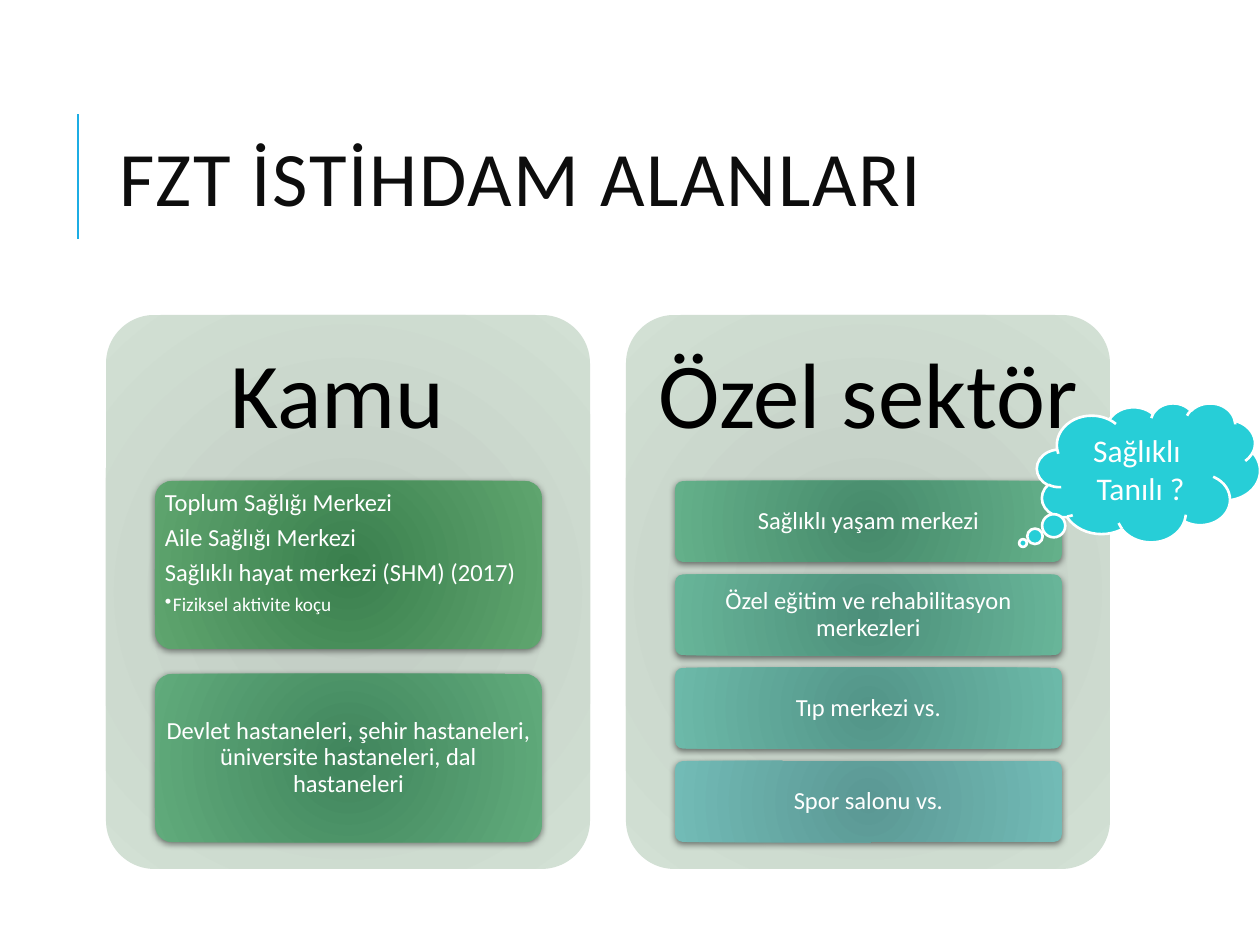
"""Build the slide on employment areas for physiotherapists."""
from lxml import etree
from pptx import Presentation
from pptx.dml.color import RGBColor
from pptx.enum.shapes import MSO_CONNECTOR, MSO_SHAPE
from pptx.enum.text import MSO_ANCHOR, PP_ALIGN
from pptx.oxml import parse_xml
from pptx.oxml.ns import nsdecls, qn
from pptx.util import Pt

ROUNDED, CLOUD = MSO_SHAPE.ROUNDED_RECTANGLE, MSO_SHAPE.CLOUD_CALLOUT
STRAIGHT = MSO_CONNECTOR.STRAIGHT
LEFT, CENTER = PP_ALIGN.LEFT, PP_ALIGN.CENTER
TOP, MIDDLE = MSO_ANCHOR.TOP, MSO_ANCHOR.MIDDLE
FONT = "Calibri"
SCALE = 914400 / 126

COLORS = {
    "title": "0D0D0D", "black": "000000", "white": "FFFFFF", "rule": "1CADE4",
    "cloud": "27CED7", "panel_inner": "C0CBC2", "panel_outer": "D2E0D4",
}
TITLE = "FZT İSTİHDAM ALANLARI"
PANELS = [
    {"heading": "Kamu ", "left": 106, "box_height": 168, "boxes": [
        {"lines": ["Toplum Sağlığı Merkezi", "Aile Sağlığı Merkezi",
                   "Sağlıklı hayat merkezi (SHM) (2017)"],
         "bullets": ["Fiziksel aktivite koçu"], "gradient": ("3A7F4D", "5FA56F")},
        {"lines": ["Devlet hastaneleri, şehir hastaneleri, üniversite hastaneleri, "
                   "dal hastaneleri"], "gradient": ("40855C", "61AB7C")},
    ]},
    {"heading": "Özel sektör", "left": 626, "box_height": 81, "boxes": [
        {"lines": ["Sağlıklı yaşam merkezi"], "gradient": ("468A6B", "64B08A")},
        {"lines": ["Özel eğitim ve rehabilitasyon merkezleri"],
         "gradient": ("4C8F7A", "68B599")},
        {"lines": ["Tıp merkezi vs."], "gradient": ("539588", "6CB9A9")},
        {"lines": ["Spor salonu vs."], "gradient": ("5B9894", "72BBB6")},
    ]},
]
CLOUD_LINES = ["Sağlıklı ", "Tanılı ?"]

PANEL_TOP, PANEL_WIDTH, PANEL_HEIGHT, HEADING_HEIGHT = 315, 484, 554, 166
BOX_INDENT, BOX_WIDTH, BOXES_TOP, BOXES_HEIGHT = 49, 387, 481, 361


def px(*lengths):
    return [round(length * SCALE) for length in lengths]


def color(name):
    return RGBColor.from_string(COLORS[name])


def set_frame(shape, anchor, margins):
    frame = shape.text_frame
    left, top = px(*margins)
    values = {"word_wrap": True, "vertical_anchor": anchor, "margin_left": left,
              "margin_right": left, "margin_top": top, "margin_bottom": top}
    for name, value in values.items():
        setattr(frame, name, value)
    return frame


def add_paragraph(frame, text, size, color_name, bullet=False, **formats):
    first = frame.paragraphs[0]
    paragraph = frame.add_paragraph() if first.runs else first
    if bullet:
        properties = paragraph._p.get_or_add_pPr()
        indent = px(8)[0]
        properties.set("marL", str(indent))
        properties.set("indent", str(-indent))
        etree.SubElement(properties, qn("a:buChar")).set("char", "•")
    for name, value in formats.items():
        setattr(paragraph, name, value)
    run = paragraph.add_run()
    run.text = text
    for name, value in {"name": FONT, "size": Pt(size)}.items():
        setattr(run.font, name, value)
    run.font.color.rgb = color(color_name)
    return run


def add_rounded(slide, place, gradient, shadow=False):
    shape = slide.shapes.add_shape(ROUNDED, *px(*place))
    shape.adjustments[0] = 0.1
    shape.line.fill.background()
    shape.fill.gradient()
    for stop, value in zip(shape.fill.gradient_stops, gradient):
        stop.color.rgb = RGBColor.from_string(value)
    linear = shape._element.spPr.find(".//" + qn("a:lin"))
    linear.getparent().replace(linear, parse_xml(
        f'<a:path {nsdecls("a")} path="circle">'
        '<a:fillToRect l="100000" t="100000" r="100000" b="100000"/></a:path>'))
    shape.shadow.inherit = False
    if shadow:
        shape._element.spPr.find(qn("a:effectLst")).append(parse_xml(
            f'<a:outerShdw {nsdecls("a")} blurRad="50800" dist="12700" dir="5400000">'
            '<a:srgbClr val="000000"><a:alpha val="50000"/></a:srgbClr></a:outerShdw>'))
    return shape


def add_title(slide):
    rule = slide.shapes.add_connector(STRAIGHT, *px(78, 239, 78, 114))
    rule.line.color.rgb = color("rule")
    rule.line.width = Pt(1.5)
    etree.SubElement(rule._element.spPr, qn("a:effectLst"))
    box = slide.shapes.add_textbox(*px(106, 81, 1004, 207))
    frame = set_frame(box, MIDDLE, (13, 6))
    run = add_paragraph(frame, TITLE, 44, "title", line_spacing=0.8)
    run.font._element.set("spc", "100")


def add_box(slide, box, place):
    bullets = box.get("bullets", [])
    anchor, alignment = (TOP, LEFT) if bullets else (MIDDLE, CENTER)
    shape = add_rounded(slide, place, box["gradient"], shadow=True)
    frame = set_frame(shape, anchor, (5, 4))
    for line in box["lines"]:
        add_paragraph(frame, line, 14, "white", alignment=alignment,
                      line_spacing=0.9, space_after=Pt(4.9))
    for line in bullets:
        add_paragraph(frame, line, 11, "white", bullet=True, level=1,
                      alignment=alignment, line_spacing=0.9, space_after=Pt(1.6))


def add_panel(slide, panel):
    left, boxes, height = panel["left"], panel["boxes"], panel["box_height"]
    add_rounded(slide, (left, PANEL_TOP, PANEL_WIDTH, PANEL_HEIGHT),
                (COLORS["panel_inner"], COLORS["panel_outer"]))
    heading = slide.shapes.add_textbox(
        *px(left, PANEL_TOP, PANEL_WIDTH, HEADING_HEIGHT))
    add_paragraph(set_frame(heading, MIDDLE, (28, 28)), panel["heading"], 53, "black",
                  alignment=CENTER, line_spacing=0.9, space_after=Pt(18.5))
    step = (BOXES_HEIGHT - height) / (len(boxes) - 1)
    for index, box in enumerate(boxes):
        add_box(slide, box, (left + BOX_INDENT, BOXES_TOP + index * step,
                             BOX_WIDTH, height))


def add_cloud(slide):
    cloud = slide.shapes.add_shape(CLOUD, *px(1037, 403, 223, 139))
    cloud.adjustments[0], cloud.adjustments[1] = -0.563, 0.508
    cloud.shadow.inherit = False
    cloud.fill.solid()
    cloud.fill.fore_color.rgb = color("cloud")
    cloud.line.color.rgb = color("white")
    cloud.line.width = Pt(1.5)
    frame = set_frame(cloud, MIDDLE, (13, 6))
    for line in CLOUD_LINES:
        add_paragraph(frame, line, 18, "white", alignment=CENTER)


def main():
    presentation = Presentation()
    presentation.slide_width, presentation.slide_height = px(1260, 945)
    slide = presentation.slides.add_slide(presentation.slide_layouts[6])
    add_title(slide)
    for panel in PANELS:
        add_panel(slide, panel)
    add_cloud(slide)
    presentation.save("out.pptx")


if __name__ == "__main__":
    main()
